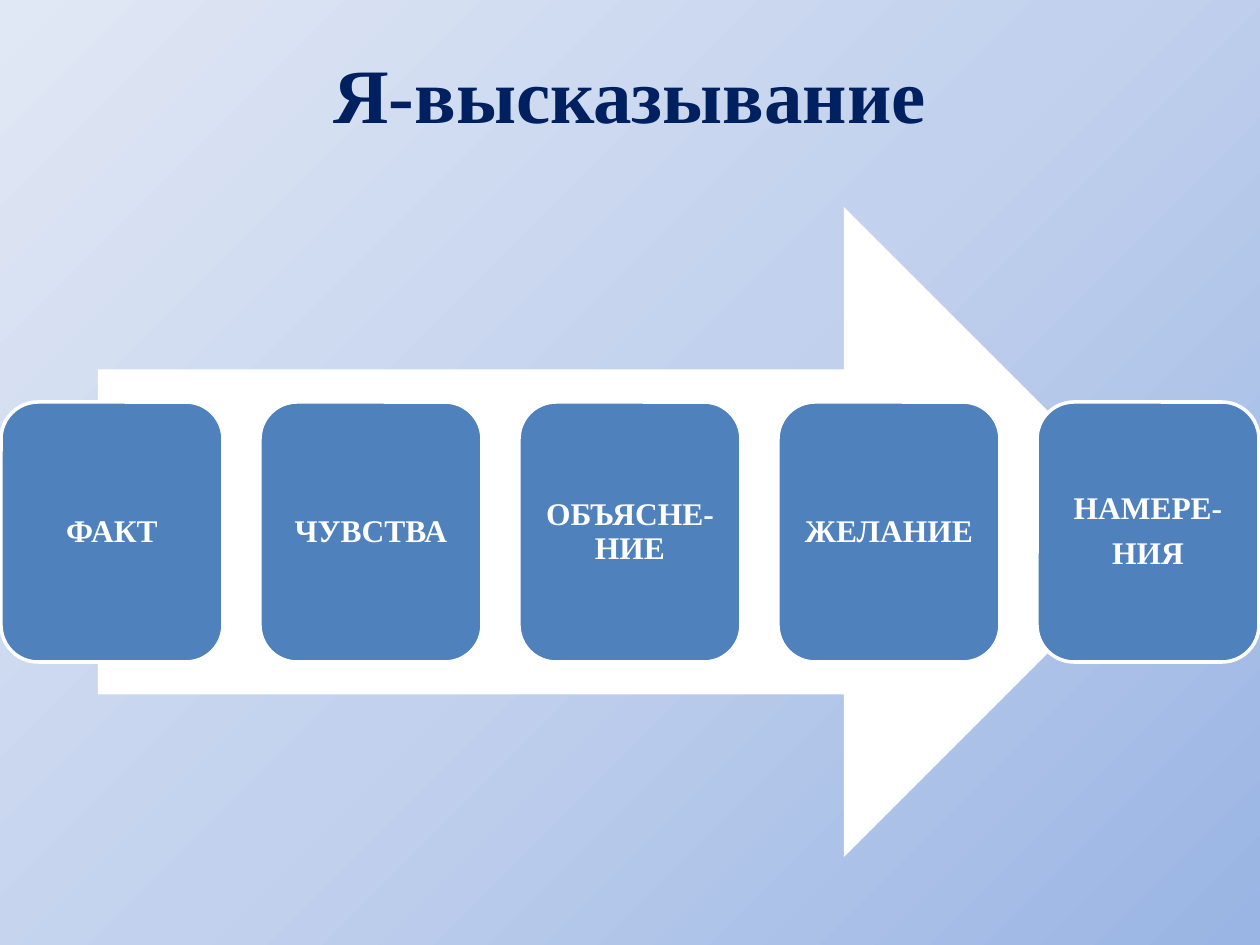
from dataclasses import dataclass

from lxml import etree
from pptx import Presentation
from pptx.dml.color import RGBColor as RGB
from pptx.enum.shapes import MSO_SHAPE as SHAPE
from pptx.enum.text import MSO_ANCHOR as ANCHOR, PP_ALIGN as ALIGN
from pptx.oxml.ns import qn
from pptx.slide import Slide
from pptx.text.text import TextFrame
from pptx.util import Emu, Pt

PX_PER_INCH = 126
SLIDE_W, SLIDE_H = 1260, 945
FONT = "Times New Roman"
COLORS = {
    "title": "002060",
    "box": "4F81BD",
    "white": "FFFFFF",
}
GRADIENT = [(0, "9AB5E4"), (50, "C2D1ED"), (100, "E1E8F5")]

BOX_LEFT, BOX_PITCH = 1, 259
BOX_TOP, BOX_W, BOX_H = 402, 222, 260
BOX_INSET = 9


@dataclass
class Step:
    text: str
    left: int


LABELS = ["ФАКТ", "ЧУВСТВА", "ОБЪЯСНЕ- НИЕ", "ЖЕЛАНИЕ", "НАМЕРЕ-\nНИЯ"]
STEPS = [Step(t, BOX_LEFT + i * BOX_PITCH) for i, t in enumerate(LABELS)]


def px(n: int) -> Emu:
    return Emu(round(n * 914400 / PX_PER_INCH))


def rgb(name: str) -> RGB:
    return RGB.from_string(COLORS[name])


def set_background(s: Slide) -> None:
    """Radial gradient spreading from the bottom right corner."""
    s.background.fill.gradient()
    grad = next(s.element.iter(qn("a:gradFill")))
    for child in list(grad):
        grad.remove(child)
    stops = etree.SubElement(grad, qn("a:gsLst"))
    for pos, color in GRADIENT:
        stop = etree.SubElement(stops, qn("a:gs"), pos=str(pos * 1000))
        etree.SubElement(stop, qn("a:srgbClr"), val=color)
    path = etree.SubElement(grad, qn("a:path"), path="circle")
    etree.SubElement(path, qn("a:fillToRect"), l="100000", t="100000")
    etree.SubElement(grad, qn("a:tileRect"), r="-100000", b="-100000")


def write(tf: TextFrame, text: str, size: int, color: str) -> None:
    tf.text = text
    tf.word_wrap = True
    tf.vertical_anchor = ANCHOR.MIDDLE
    for p in tf.paragraphs:
        p.alignment = ALIGN.CENTER
        for r in p.runs:
            r.font.name = FONT
            r.font.size = Pt(size)
            r.font.bold = True
            r.font.color.rgb = rgb(color)


def add_title(s: Slide) -> None:
    tb = s.shapes.add_textbox(px(63), px(38), px(1134), px(110))
    write(tb.text_frame, "Я-высказывание", 44, "title")


def add_arrow(s: Slide) -> None:
    sp = s.shapes.add_shape(SHAPE.RIGHT_ARROW, px(98), px(207), px(1071), px(650))
    sp.shadow.inherit = False
    sp.fill.solid()
    sp.fill.fore_color.rgb = rgb("white")
    sp.line.fill.background()


def add_step(s: Slide, step: Step) -> None:
    sp = s.shapes.add_shape(
        SHAPE.ROUNDED_RECTANGLE, px(step.left), px(BOX_TOP), px(BOX_W), px(BOX_H)
    )
    sp.shadow.inherit = False
    sp.fill.solid()
    sp.fill.fore_color.rgb = rgb("box")
    sp.line.color.rgb = rgb("white")
    sp.line.width = Pt(2)
    tf = sp.text_frame
    tf.margin_left = tf.margin_right = px(BOX_INSET)
    tf.margin_top = tf.margin_bottom = px(BOX_INSET)
    write(tf, step.text, 18, "white")
    for p in tf.paragraphs:
        p.line_spacing = 0.9
        p.space_after = Pt(6.3)


def main() -> None:
    prs = Presentation()
    prs.slide_width, prs.slide_height = px(SLIDE_W), px(SLIDE_H)
    s = prs.slides.add_slide(prs.slide_layouts[6])
    set_background(s)
    add_title(s)
    add_arrow(s)
    for step in STEPS:
        add_step(s, step)
    prs.save("out.pptx")


if __name__ == "__main__":
    main()
